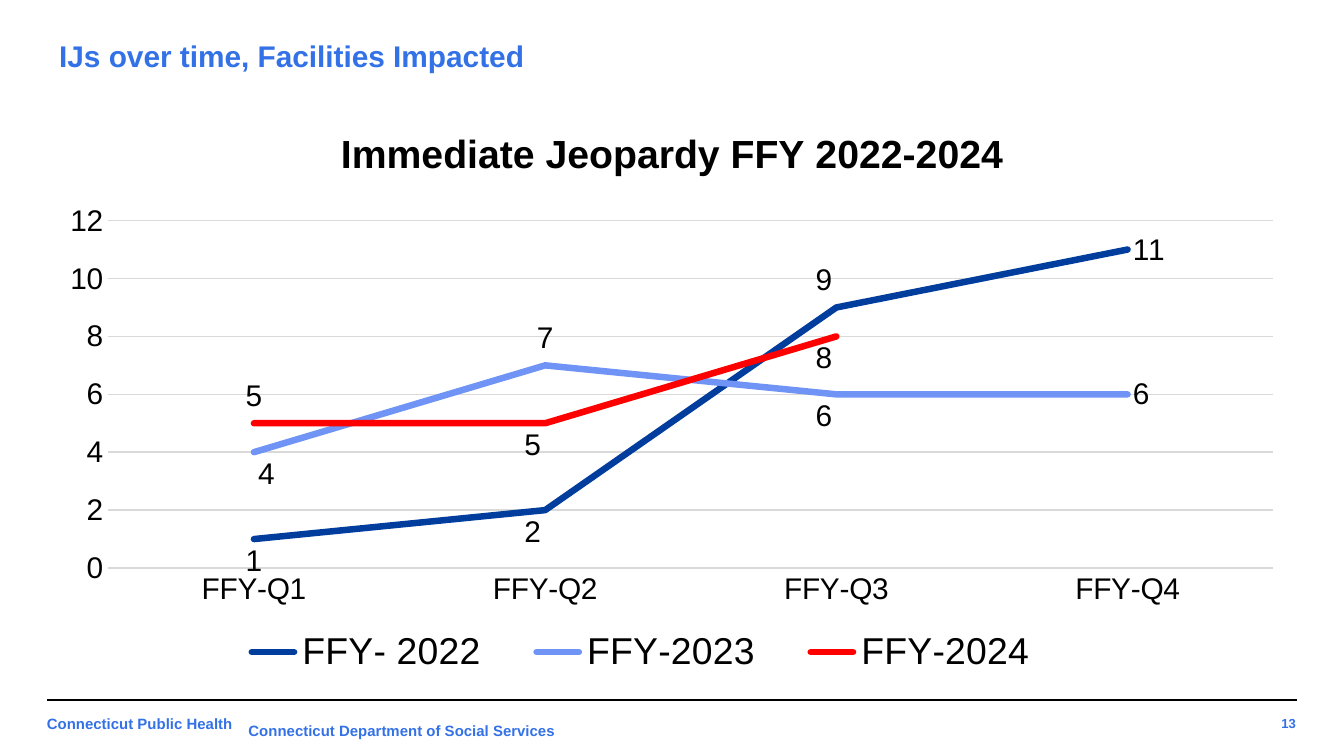
from lxml import etree
from pptx import Presentation
from pptx import util as u
from pptx.chart import data as cd
from pptx.dml.color import RGBColor
from pptx.enum import chart as ch, shapes as sh, text as tx
from pptx.oxml import parse_xml
from pptx.oxml.ns import nsdecls, qn

HUES = {"blue": "3371E7", "ink": "000000", "grid": "D9D9D9",
        "navy": "003D9C", "sky": "7094F5", "red": "FF0000"}
WIDE = 10
HIGH = WIDE * 9 / 16
EDGE = 0.34


def style(font, size, hue="ink", bold=False):
    font.name, font.size, font.bold = "Arial", u.Pt(size), bold
    font.color.rgb = RGBColor.from_string(HUES[hue])


def place(node, after, mode="edge", inner=False, **parts):
    """Give a chart part a manual layout, in shares of the chart's size."""
    for old in node.findall(qn("c:layout")):
        node.remove(old)
    goal = '<c:layoutTarget val="inner"/>' if inner else ""
    modes = "".join(f'<c:{k}Mode val="{mode}"/>' for k in "xy")
    sizes = "".join(f'<c:{k} val="{v}"/>' for k, v in parts.items())
    box = parse_xml(f'<c:layout {nsdecls("c")}><c:manualLayout>{goal}{modes}{sizes}'
                    '</c:manualLayout></c:layout>')
    node.insert(node.index(node.find(qn(after))) + 1 if after else 0, box)


deck = Presentation()
deck.slide_width, deck.slide_height = u.Inches(WIDE), u.Inches(HIGH)
slide = deck.slides.add_slide(deck.slide_layouts[5])

# Title
head = slide.shapes.title
head.left, head.top = u.Inches(EDGE), u.Inches(0.25)
head.width, head.height = u.Inches(WIDE - 2 * EDGE), u.Inches(0.33)
frame = head.text_frame
frame.margin_top = frame.margin_bottom = u.Inches(0.1)
frame.vertical_anchor = tx.MSO_ANCHOR.MIDDLE
frame.paragraphs[0].alignment = tx.PP_ALIGN.LEFT
run = frame.paragraphs[0].add_run()
run.text = "IJs over time, Facilities Impacted"
style(run.font, 16, "blue", True)

# Chart: each label has a side and a nudge across and down
BELOW, ABOVE, RIGHT = (ch.XL_LABEL_POSITION.BELOW, ch.XL_LABEL_POSITION.ABOVE,
                       ch.XL_LABEL_POSITION.RIGHT)
years = [
    ("FFY- 2022", "navy", [1, 2, 9, 11],
     [(BELOW, 0, 0), (BELOW, -0.01, 0), (ABOVE, -0.01, -0.01)]),
    ("FFY-2023", "sky", [4, 7, 6, 6],
     [(BELOW, 0.01, 0), (ABOVE, 0, -0.01), (BELOW, -0.01, 0)]),
    ("FFY-2024", "red", [5, 5, 8, None],
     [(ABOVE, 0, -0.01), (BELOW, -0.01, 0), (BELOW, -0.01, 0)]),
]
data = cd.CategoryChartData()
data.categories = [f"FFY-Q{n}" for n in range(1, 5)]
for name, hue, nums, spots in years:
    data.add_series(name, nums)
chart = slide.shapes.add_chart(
    ch.XL_CHART_TYPE.LINE, u.Inches(EDGE), u.Inches(0.78),
    u.Inches(WIDE - 2 * EDGE), u.Inches(4.31), data).chart
style(chart.font, 10)

run = chart.chart_title.text_frame.paragraphs[0].add_run()
run.text = "Immediate Jeopardy FFY 2022-2024"
style(run.font, 21, bold=True)
chart.chart_title.include_in_layout = False
place(chart.chart_title._element, "c:tx", x=0.23, y=0.03)
place(chart._chartSpace.chart.plotArea, None, inner=True, x=0.05, y=0.2, w=0.93, h=0.6)

chart.has_legend = True
key = chart.legend
key.position = ch.XL_LEGEND_POSITION.BOTTOM
key.include_in_layout = False
style(key.font, 20)
place(key._element, "c:legendPos", x=0.13, y=0.9, w=0.69, h=0.09)

for axis in (chart.category_axis, chart.value_axis):
    axis.major_tick_mark = axis.minor_tick_mark = ch.XL_TICK_MARK.NONE
    style(axis.tick_labels.font, 16)
cats, vals = chart.category_axis, chart.value_axis
vals.minimum_scale, vals.maximum_scale, vals.major_unit = 0, 12, 2
vals.has_major_gridlines = True
vals.format.line.fill.background()
for line, size in ((cats.format.line, 1), (vals.major_gridlines.format.line, 0.75)):
    line.color.rgb = RGBColor.from_string(HUES["grid"])
    line.width = u.Pt(size)

chart.plots[0].vary_by_categories = False
for row, (name, hue, nums, spots) in zip(chart.plots[0].series, years):
    row.smooth = False
    row.marker.style = ch.XL_MARKER_STYLE.NONE
    row.format.line.color.rgb = RGBColor.from_string(HUES[hue])
    row.format.line.width = u.Pt(3.5)
    row.format.line._ln.set("cap", "rnd")
    tags = row.data_labels
    tags.show_value, tags.position = True, RIGHT
    style(tags.font, 16)
    for n, (side, x, y) in enumerate(spots):
        tag = row.points[n].data_label
        style(tag.font, 16)
        tag.position = side
        if x or y:
            place(tags._element.dLbl_lst[n], "c:idx", "factor", x=x, y=y)

# Footer
rule = slide.shapes.add_connector(
    sh.MSO_CONNECTOR.STRAIGHT, u.Inches(WIDE - 0.35), u.Inches(5.21),
    u.Inches(0.35), u.Inches(5.21))
rule.line.color.rgb = RGBColor.from_string(HUES["ink"])
rule.line.width = u.Pt(0.75)
etree.SubElement(rule._element.spPr, qn("a:effectLst"))

notes = [
    ("Connecticut Public Health", 0.25, 5.25, 3.28, 0.34, 8, 0.1, "LEFT", "TOP"),
    ("Connecticut Department of Social Services", 1.75, 5.32, 2.51, 0.24, 8, 0.05,
     "LEFT", "TOP"),
    ("13", 9.14, 5.26, 0.6, 0.25, 7, 0.1, "RIGHT", "MIDDLE"),
]
for words, x, y, w, h, size, pad, side, hold in notes:
    box = slide.shapes.add_textbox(*map(u.Inches, (x, y, w, h)))
    frame = box.text_frame
    frame.word_wrap = True
    frame.margin_left = frame.margin_right = u.Inches(0.1)
    frame.margin_top = frame.margin_bottom = u.Inches(pad)
    frame.vertical_anchor = tx.MSO_ANCHOR[hold]
    frame.paragraphs[0].alignment = tx.PP_ALIGN[side]
    run = frame.paragraphs[0].add_run()
    run.text = words
    style(run.font, size, "blue", True)

deck.save("out.pptx")
